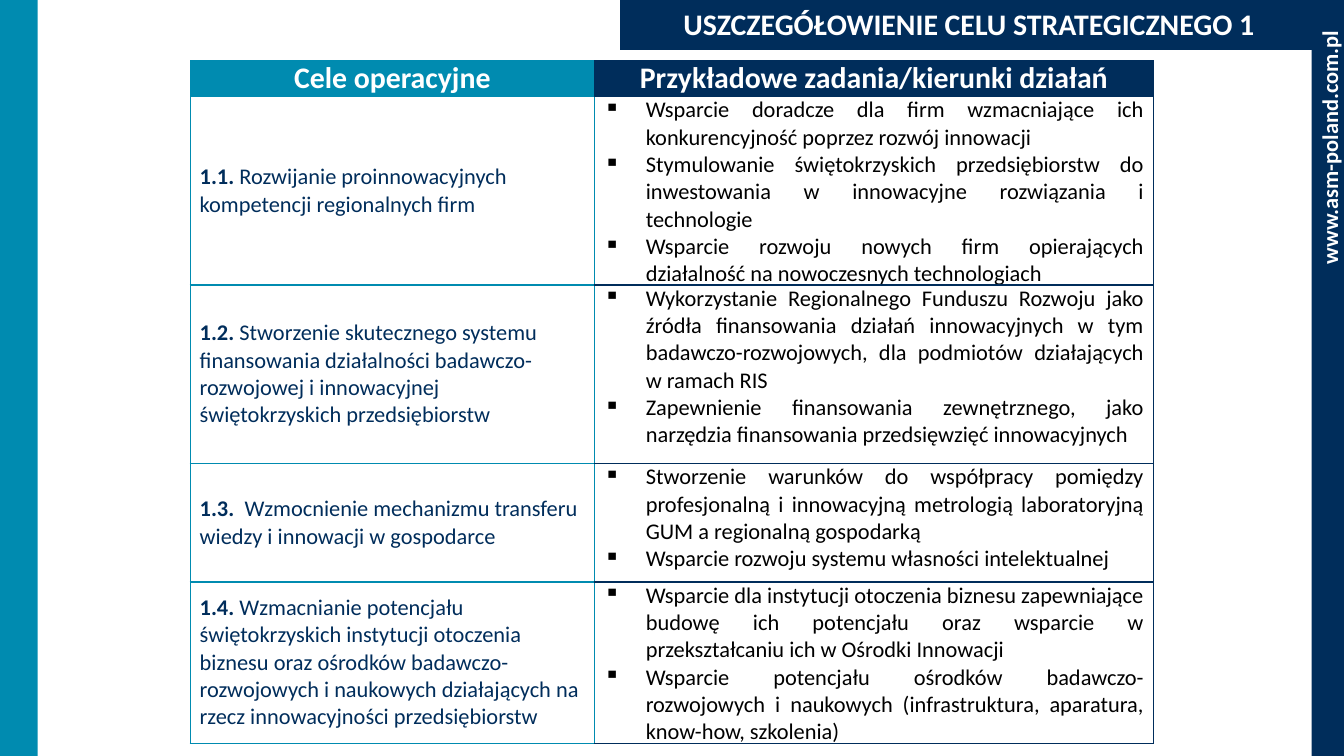
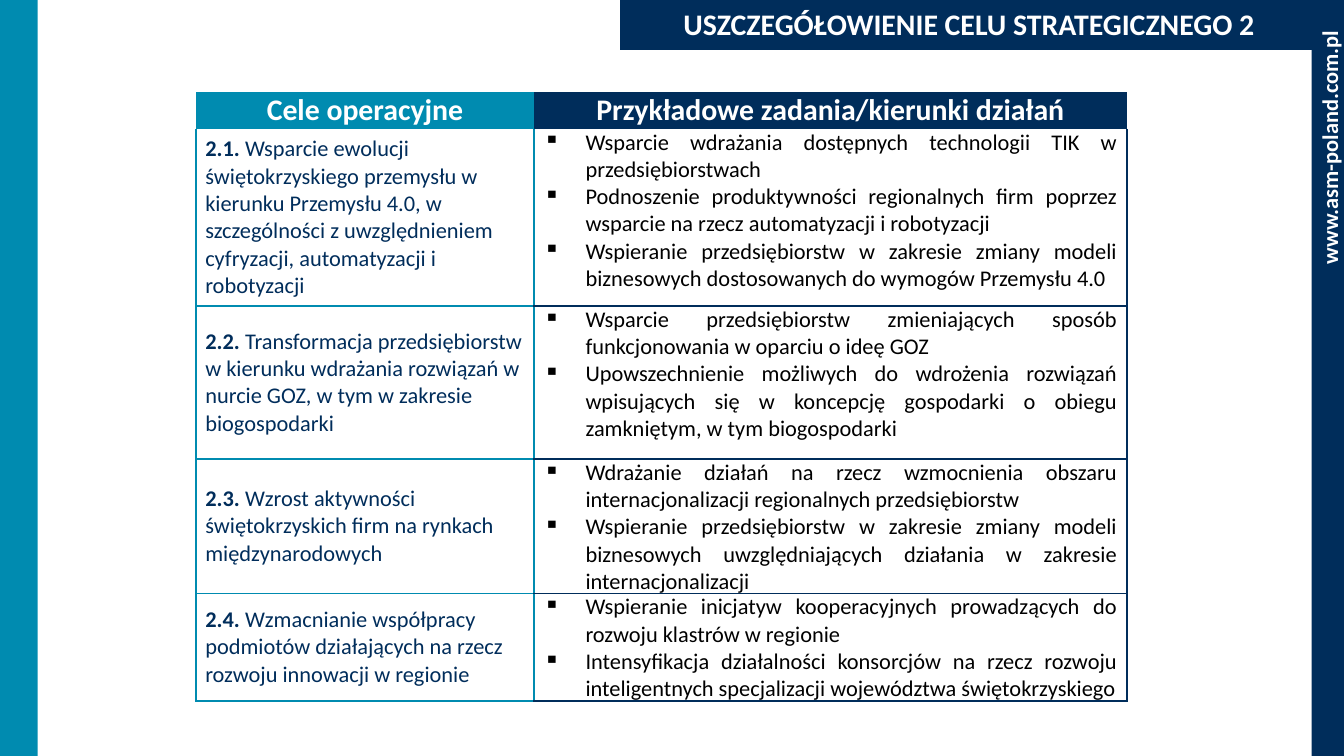
"""Two slides detailing strategic goals, each with a table of operational goals and tasks."""
from pptx import Presentation
from pptx.dml.color import RGBColor
from pptx.enum.shapes import MSO_SHAPE
from pptx.enum.text import MSO_ANCHOR, PP_ALIGN
from pptx.oxml.ns import qn
from pptx.util import Pt
from lxml.etree import SubElement

HUES = {"teal": "008BB0", "navy": "002D5B", "white": "FFFFFF", "black": "000000"}
FONT = "Calibri"
WIDE, HIGH = 720, 405
BAND = 20.2
HEADS = ["Cele operacyjne", "Przykładowe zadania/kierunki działań"]
GOALS = [
    {
        "title": "USZCZEGÓŁOWIENIE CELU STRATEGICZNEGO 1",
        "place": (102, 32.2), "cols": (216.5, 299.5),
        "rows": (19.6, 95, 95.8, 63.4, 75),
        "items": [
            ("1.1. ", "Rozwijanie proinnowacyjnych kompetencji regionalnych firm", [
                "Wsparcie doradcze dla firm wzmacniające ich konkurencyjność poprzez rozwój innowacji",
                "Stymulowanie świętokrzyskich przedsiębiorstw do inwestowania w innowacyjne rozwiązania i technologie",
                "Wsparcie rozwoju nowych firm opierających działalność na nowoczesnych technologiach"]),
            ("1.2. ", "Stworzenie skutecznego systemu finansowania działalności badawczo-rozwojowej "
             "i innowacyjnej świętokrzyskich przedsiębiorstw", [
                "Wykorzystanie Regionalnego Funduszu Rozwoju jako źródła finansowania działań innowacyjnych "
                "w tym badawczo-rozwojowych, dla podmiotów działających w ramach RIS",
                "Zapewnienie finansowania zewnętrznego, jako narzędzia finansowania przedsięwzięć innowacyjnych"]),
            ("1.3.  ", "Wzmocnienie mechanizmu transferu wiedzy i innowacji w gospodarce", [
                "Stworzenie warunków do współpracy pomiędzy profesjonalną i innowacyjną metrologią "
                "laboratoryjną GUM a regionalną gospodarką",
                "Wsparcie rozwoju systemu własności intelektualnej"]),
            ("1.4. ", "Wzmacnianie potencjału świętokrzyskich instytucji otoczenia biznesu oraz ośrodków "
             "badawczo-rozwojowych i naukowych działających na rzecz innowacyjności przedsiębiorstw", [
                "Wsparcie dla instytucji otoczenia biznesu zapewniające budowę ich potencjału oraz wsparcie "
                "w przekształcaniu ich w Ośrodki Innowacji",
                "Wsparcie potencjału ośrodków badawczo-rozwojowych i naukowych (infrastruktura, aparatura, "
                "know-how, szkolenia)"]),
        ],
    },
    {
        "title": "USZCZEGÓŁOWIENIE CELU STRATEGICZNEGO 2",
        "place": (105, 49.4), "cols": (181.2, 317.5),
        "rows": (19.6, 95, 82, 63.4, 34.6),
        "items": [
            ("2.1. ", "Wsparcie ewolucji świętokrzyskiego przemysłu w kierunku Przemysłu 4.0, w szczególności "
             "z uwzględnieniem cyfryzacji, automatyzacji i robotyzacji", [
                "Wsparcie wdrażania dostępnych technologii TIK w przedsiębiorstwach",
                "Podnoszenie produktywności regionalnych firm poprzez wsparcie na rzecz automatyzacji i robotyzacji",
                "Wspieranie przedsiębiorstw w zakresie zmiany modeli biznesowych dostosowanych do wymogów "
                "Przemysłu 4.0"]),
            ("2.2. ", "Transformacja przedsiębiorstw w kierunku wdrażania rozwiązań w nurcie GOZ, "
             "w tym w zakresie biogospodarki", [
                "Wsparcie przedsiębiorstw zmieniających sposób funkcjonowania w oparciu o ideę GOZ",
                "Upowszechnienie możliwych do wdrożenia rozwiązań wpisujących się w koncepcję gospodarki "
                "o obiegu zamkniętym, w tym biogospodarki"]),
            ("2.3. ", "Wzrost aktywności świętokrzyskich firm na rynkach międzynarodowych", [
                "Wdrażanie działań na rzecz wzmocnienia obszaru internacjonalizacji regionalnych przedsiębiorstw",
                "Wspieranie przedsiębiorstw w zakresie zmiany modeli biznesowych uwzględniających działania "
                "w zakresie internacjonalizacji"]),
            ("2.4. ", "Wzmacnianie współpracy podmiotów działających na rzecz rozwoju innowacji w regionie", [
                "Wspieranie inicjatyw kooperacyjnych prowadzących do rozwoju klastrów w regionie",
                "Intensyfikacja działalności konsorcjów na rzecz rozwoju inteligentnych specjalizacji "
                "województwa świętokrzyskiego"]),
        ],
    },
]


def write(para, parts, size, hue, align):
    """Add (text, bold) runs to a paragraph."""
    para.alignment = align
    for text, bold in parts:
        run = para.add_run()
        run.text = text
        run.font.name, run.font.size, run.font.bold = FONT, Pt(size), bold
        run.font.color.rgb = RGBColor.from_string(HUES[hue])


def dress(cell, edges, fill=None):
    """Draw the cell's edges (a hue, or None for no line), then its fill."""
    props = cell._tc.get_or_add_tcPr()
    for side, hue in zip("LRTB", edges):
        line = SubElement(props, qn(f"a:ln{side}"), w=str(Pt(1)))
        if hue:
            solid = SubElement(line, qn("a:solidFill"))
            SubElement(solid, qn("a:srgbClr"), val=HUES[hue])
        else:
            SubElement(line, qn("a:noFill"))
    if fill:
        cell.fill.solid()
        cell.fill.fore_color.rgb = RGBColor.from_string(HUES[fill])
    else:
        cell.fill.background()


deck = Presentation()
deck.slide_width, deck.slide_height = Pt(WIDE), Pt(HIGH)

for goal in GOALS:
    slide = deck.slides.add_slide(deck.slide_layouts[6])
    shapes = slide.shapes

    for left, hue in ((0, "teal"), (702.7, "navy")):
        band = shapes.add_shape(MSO_SHAPE.RECTANGLE, Pt(left), 0, Pt(BAND), Pt(HIGH))
        band.shadow.inherit = False
        band.fill.solid()
        band.fill.fore_color.rgb = RGBColor.from_string(HUES[hue])
        band.line.fill.background()

    site = shapes.add_textbox(Pt(638), Pt(72.7), Pt(148.3), Pt(21.6))
    site.rotation = 270
    site.text_frame.word_wrap = True
    write(site.text_frame.paragraphs[0], [("www.asm-poland.com.pl", True)], 12, "white", PP_ALIGN.RIGHT)

    bar = shapes.add_table(1, 1, Pt(332), 0, Pt(374.4), Pt(26.6)).table
    bar.first_row = bar.horz_banding = False
    cell = bar.cell(0, 0)
    dress(cell, [None] * 4, "navy")
    write(cell.text_frame.paragraphs[0], [(goal["title"], True)], 16, "white", PP_ALIGN.CENTER)

    left, top = goal["place"]
    cols, rows = goal["cols"], goal["rows"]
    grid = shapes.add_table(len(rows), len(cols), Pt(left), Pt(top), Pt(sum(cols)), Pt(sum(rows))).table
    grid.first_row = grid.horz_banding = False
    for col, width in zip(grid.columns, cols):
        col.width = Pt(width)
    for row, height in zip(grid.rows, rows):
        row.height = Pt(height)
    for cell in grid.iter_cells():
        cell.margin_left = cell.margin_right = Pt(5)
        cell.margin_top = cell.margin_bottom = 0
        cell.vertical_anchor = MSO_ANCHOR.MIDDLE

    for col, (head, hue) in enumerate(zip(HEADS, ("teal", "navy"))):
        cell = grid.cell(0, col)
        dress(cell, [None] * 4, hue)
        write(cell.text_frame.paragraphs[0], [(head, True)], 16, "white", PP_ALIGN.CENTER)

    for row, (mark, aim, tasks) in enumerate(goal["items"], 1):
        cell = grid.cell(row, 0)
        dress(cell, ["teal", "teal", "teal" if row > 1 else None, "teal"])
        write(cell.text_frame.paragraphs[0], [(mark, True), (aim, False)], 12, "navy", PP_ALIGN.LEFT)

        cell = grid.cell(row, 1)
        cell.vertical_anchor = MSO_ANCHOR.TOP
        dress(cell, ["teal", "navy", "navy" if row > 1 else None, "navy"])
        frame = cell.text_frame
        for spot, task in enumerate(tasks):
            para = frame.add_paragraph() if spot else frame.paragraphs[0]
            props = para._p.get_or_add_pPr()
            props.set("marL", str(Pt(22.5)))
            props.set("indent", str(-Pt(22.5)))
            SubElement(props, qn("a:buChar"), char="▪")
            write(para, [(task, False)], 12, "black", PP_ALIGN.JUSTIFY)

deck.save("out.pptx")
